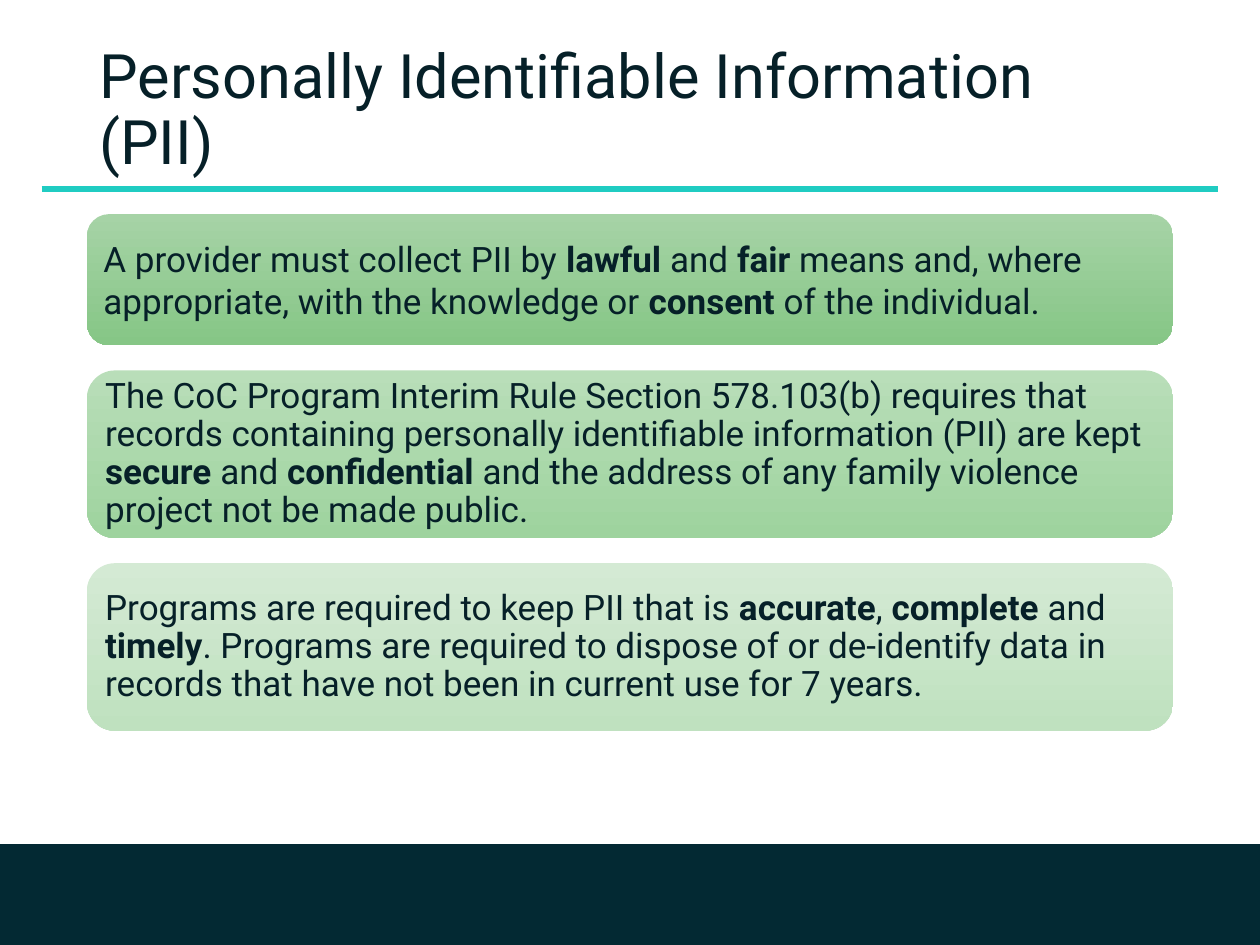
"""Build the slide on handling personally identifiable information."""
from pptx import Presentation
from pptx.dml.color import RGBColor
from pptx.enum.shapes import MSO_CONNECTOR, MSO_SHAPE
from pptx.enum.text import MSO_ANCHOR, PP_ALIGN
from pptx.oxml.ns import qn
from pptx.util import Inches, Pt

COLORS = {"text": "062028", "rule": "20CCC2", "footer": "032933"}
LEFT, WIDTH = 0.69, 8.62
CARD_TOP, CARD_GAP = 1.7, 0.2
CARDS = [
    (1.04, 1.0, ("A6D3A6", "86C686"), [
        ("A provider must collect PII by ", False), ("lawful", True), (" and ", False),
        ("fair", True), (" means and, where appropriate, with the knowledge or ", False),
        ("consent", True), (" of the individual.", False)]),
    (1.33, 0.9, ("B9DEB9", "9ED39E"), [
        ("The CoC Program Interim Rule Section 578.103(b) requires that records containing "
         "personally identifiable information (PII) are kept ", False),
        ("secure", True), (" and ", False), ("confidential", True),
        (" and the address of any family violence project not be made public.", False)]),
    (1.33, 0.9, ("D4EAD4", "BFE1BF"), [
        ("Programs are required to keep PII that is ", False), ("accurate", True),
        (",", False), (" complete", True), (" and ", False), ("timely", True),
        (". Programs are required to dispose of or de-identify data in records that have "
         "not been in current use for 7 years.", False)]),
]


def rgb(value):
    return RGBColor.from_string(value)


def write(tf, runs, size, spacing, inset):
    frame = {"word_wrap": True, "vertical_anchor": MSO_ANCHOR.MIDDLE}
    for side in ("left", "right", "top", "bottom"):
        frame[f"margin_{side}"] = Inches(inset)
    for name, value in frame.items():
        setattr(tf, name, value)
    p = tf.paragraphs[0]
    p.alignment, p.line_spacing = PP_ALIGN.LEFT, spacing
    for text, bold in runs:
        r = p.add_run()
        r.text = text
        for name, value in {"name": "Roboto", "size": Pt(size), "bold": bold}.items():
            setattr(r.font, name, value)
        r.font.color.rgb = rgb(COLORS["text"])


prs = Presentation()
prs.slide_width, prs.slide_height = Inches(10), Inches(7.5)
s = prs.slides.add_slide(prs.slide_layouts[6])

footer = s.shapes.add_shape(MSO_SHAPE.RECTANGLE, 0, Inches(6.7), Inches(10), Inches(0.8))
footer.shadow.inherit = False
footer.fill.solid()
footer.fill.fore_color.rgb = rgb(COLORS["footer"])
footer.line.fill.background()

rule = s.shapes.add_connector(
    MSO_CONNECTOR.STRAIGHT, Inches(0.33), Inches(1.5), Inches(9.67), Inches(1.5))
rule.line.color.rgb = rgb(COLORS["rule"])
rule.line.width = Pt(4)
spPr = rule._element.spPr
spPr.append(spPr.makeelement(qn("a:effectLst"), {}))

title = s.shapes.add_textbox(Inches(LEFT), Inches(0.4), Inches(WIDTH), Inches(0.97))
write(title.text_frame, [("Personally Identifiable Information (PII)", False)], 35, 0.9, 0.1)

top = CARD_TOP
for height, spacing, shades, runs in CARDS:
    card = s.shapes.add_shape(
        MSO_SHAPE.ROUNDED_RECTANGLE, Inches(LEFT), Inches(top), Inches(WIDTH), Inches(height))
    card.shadow.inherit = False
    card.line.fill.background()
    card.fill.gradient()
    card.fill.gradient_angle = 270
    for stop, shade in zip(card.fill.gradient_stops, shades):
        stop.color.rgb = rgb(shade)
    write(card.text_frame, runs, 20, spacing, 0.08)
    top += height + CARD_GAP

prs.save("out.pptx")
